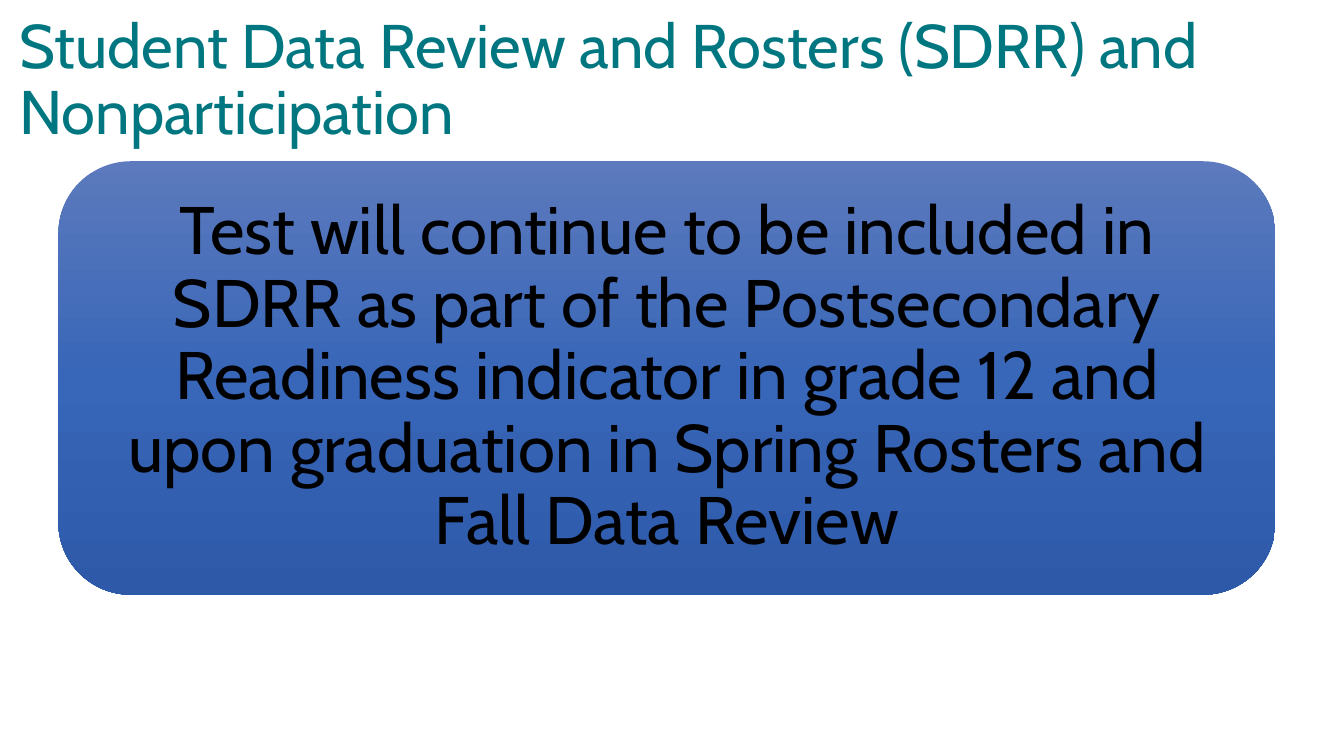
from copy import deepcopy

from pptx import Presentation
from pptx.dml.color import RGBColor
from pptx.enum.shapes import MSO_SHAPE
from pptx.enum.text import MSO_ANCHOR, MSO_AUTO_SIZE, PP_ALIGN
from pptx.util import Inches, Pt

ROUND = MSO_SHAPE.ROUNDED_RECTANGLE
TOP, MIDDLE = MSO_ANCHOR.TOP, MSO_ANCHOR.MIDDLE
LEFT, CENTER = PP_ALIGN.LEFT, PP_ALIGN.CENTER
NO_FIT = MSO_AUTO_SIZE.NONE

TEAL = RGBColor(0x00, 0x77, 0x80)
BLACK = RGBColor(0x00, 0x00, 0x00)
BLUES = [
    (0, RGBColor(0x5C, 0x7A, 0xBD)),
    (0.5, RGBColor(0x38, 0x66, 0xB8)),
    (1, RGBColor(0x2D, 0x59, 0xA8)),
]
FONT = "Cabin"


def write(shape, text, size, color, align, anchor, inset):
    """Fill a shape with one styled paragraph."""
    frame = shape.text_frame
    frame.text = text
    frame.word_wrap = True
    frame.auto_size = NO_FIT
    frame.vertical_anchor = anchor
    frame.margin_left = frame.margin_right = Inches(inset)
    frame.margin_top = frame.margin_bottom = Inches(inset)
    line = frame.paragraphs[0]
    line.alignment = align
    line.line_spacing = 0.9
    line.space_before = Pt(0)
    line.font.name = FONT
    line.font.size = Pt(size)
    line.font.color.rgb = color


def shade(shape, stops):
    """Give a shape a gradient that runs from top to bottom."""
    fill = shape.fill
    fill.gradient()
    fill.gradient_angle = 270
    first = shape.element.spPr.gradFill.gsLst[0]
    first.addnext(deepcopy(first))
    for stop, (place, color) in zip(fill.gradient_stops, stops):
        stop.position = place
        stop.color.rgb = color


def add_title(slide, text, x, y, w, h):
    """Place the slide title in the given box."""
    title = slide.shapes.title
    title.left, title.top = Inches(x), Inches(y)
    title.width, title.height = Inches(w), Inches(h)
    write(title, text, 44, TEAL, LEFT, TOP, 0)


def add_panel(slide, text, x, y, w, h):
    """Draw the rounded message panel in the given box."""
    panel = slide.shapes.add_shape(
        ROUND, Inches(x), Inches(y), Inches(w), Inches(h))
    panel.shadow.inherit = False
    panel.line.fill.background()
    shade(panel, BLUES)
    write(panel, text, 48, BLACK, CENTER, MIDDLE, 0.2)


def main():
    """Build and save the slide."""
    deck = Presentation()
    deck.slide_width, deck.slide_height = Inches(13.33), Inches(7.5)
    slide = deck.slides.add_slide(deck.slide_layouts.get_by_name("Title Only"))
    add_title(
        slide,
        "Student Data Review and Rosters (SDRR) and Nonparticipation",
        0.19, 0.15, 12.07, 0.98)
    add_panel(
        slide,
        "Test will continue to be included in SDRR as part of the "
        "Postsecondary Readiness indicator in grade 12 and upon graduation "
        "in Spring Rosters and Fall Data Review",
        0.58, 1.6, 12.07, 4.3)
    deck.save("out.pptx")


if __name__ == "__main__":
    main()
